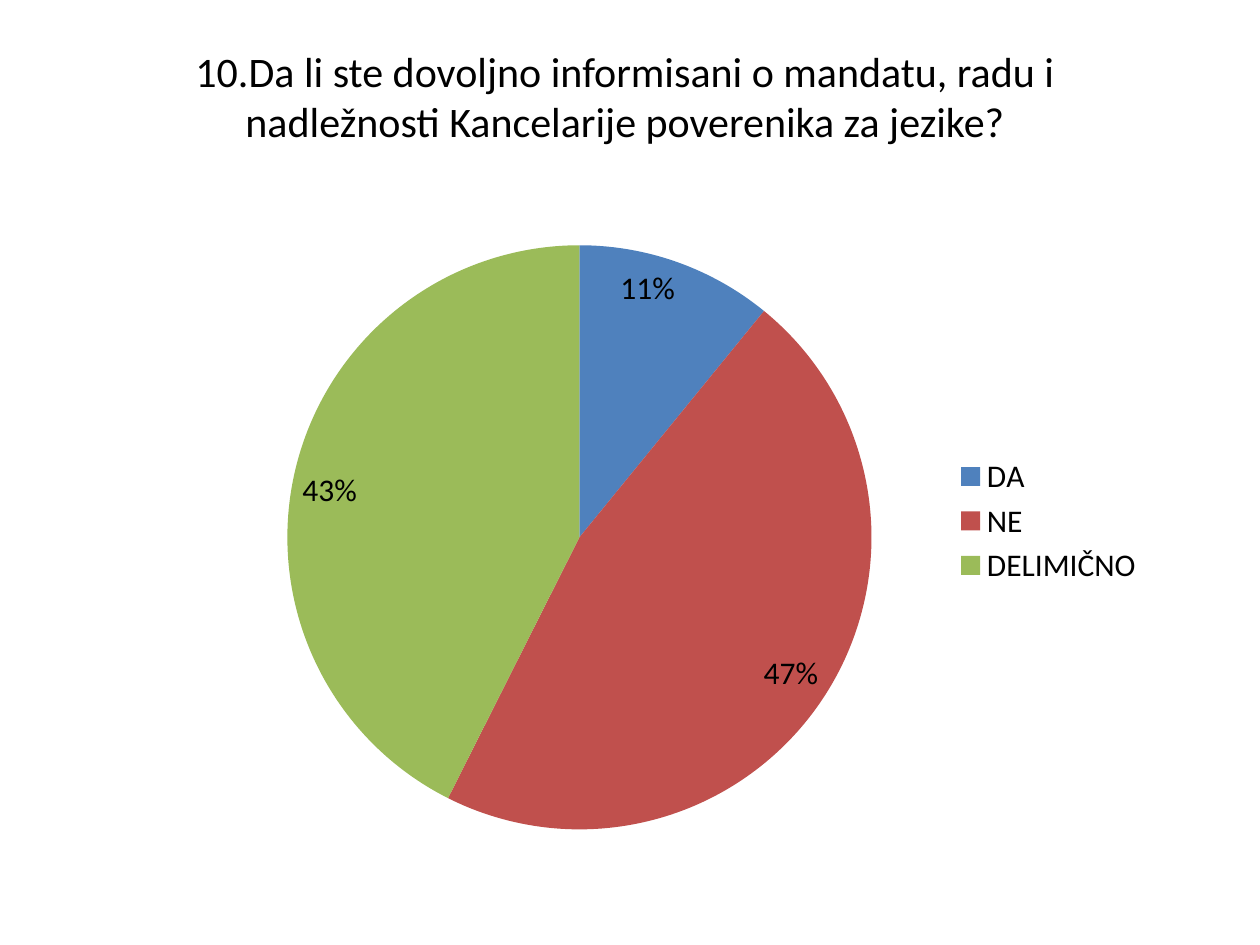
from lxml import etree
from pptx import Presentation
from pptx.chart.data import CategoryChartData
from pptx.dml.color import RGBColor
from pptx.enum.chart import XL_CHART_TYPE, XL_LABEL_POSITION, XL_LEGEND_POSITION
from pptx.enum.text import PP_ALIGN
from pptx.oxml.ns import qn
from pptx.util import Inches, Pt

COLORS = {"text": "000000", "DA": "4F81BD", "NE": "C0504D", "DELIMIČNO": "9BBB59"}
ANSWERS = {"DA": 11, "NE": 47, "DELIMIČNO": 43}
QUESTION = ("10.Da li ste dovoljno informisani o mandatu, radu i "
            "nadležnosti Kancelarije poverenika za jezike?")


class SurveySlide:
    font_name = "Calibri"

    def __init__(self, slide):
        self.slide = slide

    def style(self, font, size):
        font.name = self.font_name
        font.size = Pt(size)
        font.color.rgb = RGBColor.from_string(COLORS["text"])

    def heading(self, text, left, top, width, height):
        box = self.slide.shapes.add_textbox(
            Inches(left), Inches(top), Inches(width), Inches(height))
        box.text_frame.word_wrap = True
        question = box.text_frame.paragraphs[0]
        question.text = text
        question.alignment = PP_ALIGN.CENTER
        self.style(question.font, 24)

    def pie(self, answers, left, top, width, height, plot_area):
        """Draw a pie; plot_area is x, y, w, h as fractions of the chart."""
        data = CategoryChartData()
        data.categories = list(answers)
        data.add_series("Series 1", list(answers.values()))
        chart = self.slide.shapes.add_chart(
            XL_CHART_TYPE.PIE, Inches(left), Inches(top),
            Inches(width), Inches(height), data).chart
        chart.has_title = False
        self.style(chart.font, 18)
        chart.has_legend = True
        chart.legend.position = XL_LEGEND_POSITION.RIGHT
        chart.legend.include_in_layout = False

        plot = chart.plots[0]
        plot.vary_by_categories = True
        for index, answer in enumerate(answers):
            fill = plot.series[0].points[index].format.fill
            fill.solid()
            fill.fore_color.rgb = RGBColor.from_string(COLORS[answer])

        plot.has_data_labels = True
        labels = plot.data_labels
        labels.show_percentage = True
        labels.show_value = False
        labels.number_format = "0%"
        labels.number_format_is_linked = False
        labels.position = XL_LABEL_POSITION.INSIDE_END
        self.style(labels.font, 18)
        self.place_plot(chart, plot_area)

    @staticmethod
    def place_plot(chart, plot_area):
        area = chart.element.find(".//" + qn("c:plotArea"))
        for automatic in area.findall(qn("c:layout")):
            area.remove(automatic)
        layout = etree.Element(qn("c:layout"))
        area.insert(0, layout)
        manual = etree.SubElement(layout, qn("c:manualLayout"))
        settings = [("layoutTarget", "inner"), ("xMode", "edge"), ("yMode", "edge")]
        settings += zip("xywh", plot_area)
        for tag, value in settings:
            etree.SubElement(manual, qn("c:" + tag)).set("val", str(value))


def main():
    presentation = Presentation()
    presentation.slide_width = Inches(10)
    presentation.slide_height = Inches(7.5)
    survey = SurveySlide(presentation.slides.add_slide(presentation.slide_layouts[6]))
    survey.heading(QUESTION, 1.3, 0.31, 7.32, 0.91)
    survey.pie(ANSWERS, 1.67, 1.53, 7.51, 5.21, plot_area=(0.08, 0.08, 0.62, 0.89))
    presentation.save("out.pptx")


if __name__ == "__main__":
    main()
